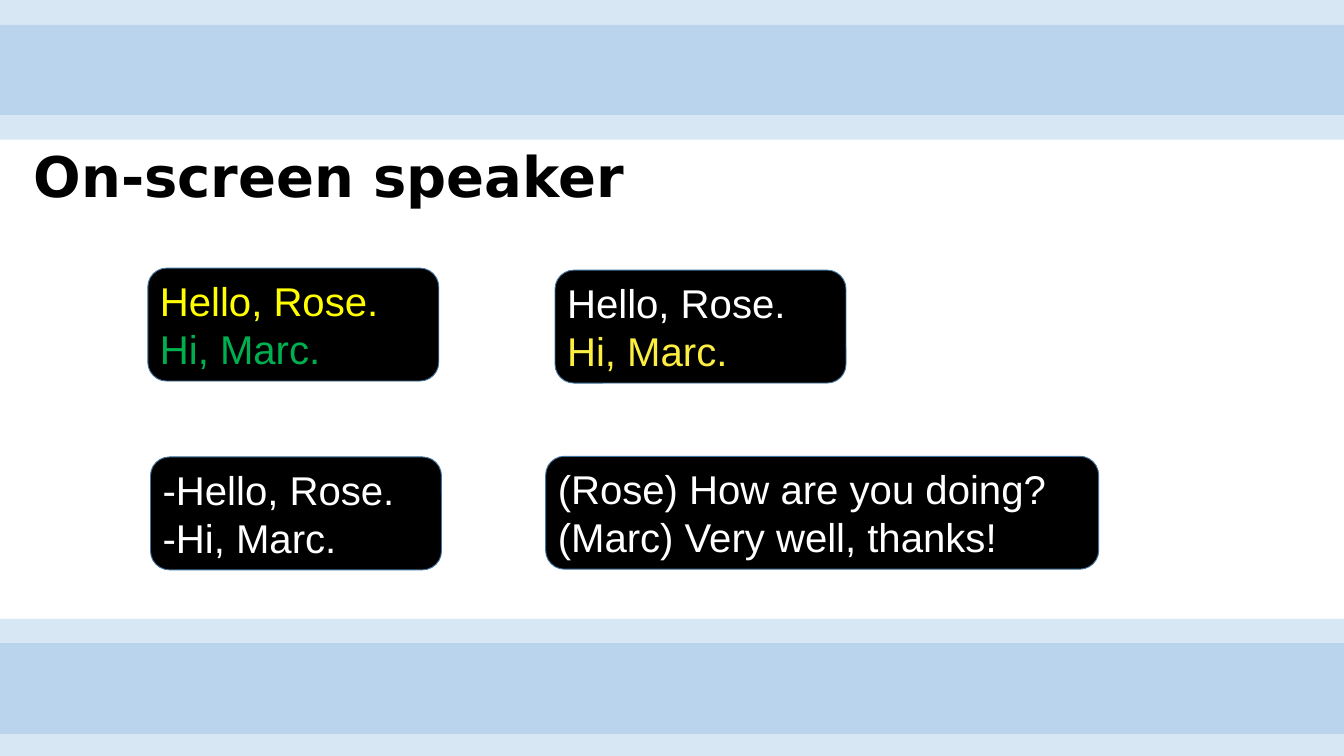
from lxml import etree
from pptx import Presentation
from pptx.dml.color import RGBColor
from pptx.enum.shapes import MSO_SHAPE
from pptx.enum.text import MSO_ANCHOR, PP_ALIGN
from pptx.oxml.ns import qn
from pptx.util import Inches, Pt

RECTANGLE = MSO_SHAPE.RECTANGLE
ROUNDED = MSO_SHAPE.ROUNDED_RECTANGLE
MIDDLE = MSO_ANCHOR.MIDDLE
LEFT = PP_ALIGN.LEFT

BLACK = RGBColor(0x00, 0x00, 0x00)
WHITE = RGBColor(0xFF, 0xFF, 0xFF)
YELLOW = RGBColor(0xFF, 0xFF, 0x00)
GREEN = RGBColor(0x00, 0xB0, 0x50)
SOFT_YELLOW = RGBColor(0xFB, 0xEE, 0x40)
BAND_BLUE = RGBColor(0x5B, 0x9B, 0xD5)
OUTLINE_BLUE = RGBColor(0x43, 0x73, 0x9E)

SLIDE_WIDTH, SLIDE_HEIGHT = 20, 11.25
BAND_HEIGHT = 1.71
BAND_TOPS = (9.57, 9.21, 0, 0.37)
BAND_OPACITY = 24
CAPTION_HEIGHT = 1.68

# left, top, width, lines with their colours
CAPTIONS = (
    (2.2, 3.99, 4.33, (("Hello, Rose.", YELLOW), ("Hi, Marc.", GREEN))),
    (8.26, 4.02, 4.33, (("Hello, Rose.", WHITE), ("Hi, Marc.", SOFT_YELLOW))),
    (2.24, 6.8, 4.33, (("-Hello, Rose.", WHITE), ("-Hi, Marc.", WHITE))),
    (8.12, 6.79, 8.23, (("(Rose) How are you doing?", WHITE),
                        ("(Marc) Very well, thanks!", WHITE))),
)


def write_line(paragraph, text, *, size, font, color, bold=False, spacing=None):
    paragraph.alignment = LEFT
    paragraph.line_spacing = spacing
    run = paragraph.add_run()
    run.text = text
    run.font.size = Pt(size)
    run.font.name = font
    run.font.bold = bold
    run.font.color.rgb = color


def add_filled_shape(slide, kind, left, top, width, height, color):
    shape = slide.shapes.add_shape(
        kind, Inches(left), Inches(top), Inches(width), Inches(height))
    shape.shadow.inherit = False
    shape.fill.solid()
    shape.fill.fore_color.rgb = color
    return shape


def add_band(slide, top):
    """Add a translucent full-width band; overlaps give the darker stripe."""
    band = add_filled_shape(
        slide, RECTANGLE, 0, top, SLIDE_WIDTH, BAND_HEIGHT, BAND_BLUE)
    band.line.fill.background()
    color = band.fill._xPr.find(qn("a:solidFill"))[0]
    etree.SubElement(color, qn("a:alpha"), val=str(BAND_OPACITY * 1000))


def add_title(slide, text):
    title = slide.shapes.add_textbox(
        Inches(0.35), Inches(2.09), Inches(13.31), Inches(1.16))
    frame = title.text_frame
    frame.word_wrap = True
    frame.vertical_anchor = MIDDLE
    frame.margin_left = frame.margin_right = Inches(0.15)
    frame.margin_top = frame.margin_bottom = Inches(0.07)
    write_line(frame.paragraphs[0], text, size=60, font="DejaVu Sans",
               color=BLACK, bold=True, spacing=0.9)


def add_caption(slide, left, top, width, lines):
    caption = add_filled_shape(
        slide, ROUNDED, left, top, width, CAPTION_HEIGHT, BLACK)
    caption.line.color.rgb = OUTLINE_BLUE
    caption.line.width = Pt(1)
    frame = caption.text_frame
    frame.word_wrap = True
    frame.vertical_anchor = MIDDLE
    for index, (text, color) in enumerate(lines):
        paragraph = frame.add_paragraph() if index else frame.paragraphs[0]
        write_line(paragraph, text, size=43, font="Arial", color=color)


def main():
    presentation = Presentation()
    presentation.slide_width = Inches(SLIDE_WIDTH)
    presentation.slide_height = Inches(SLIDE_HEIGHT)
    slide = presentation.slides.add_slide(presentation.slide_layouts[6])
    for top in BAND_TOPS:
        add_band(slide, top)
    add_title(slide, "On-screen speaker")
    for caption in CAPTIONS:
        add_caption(slide, *caption)
    presentation.save("out.pptx")


if __name__ == "__main__":
    main()
